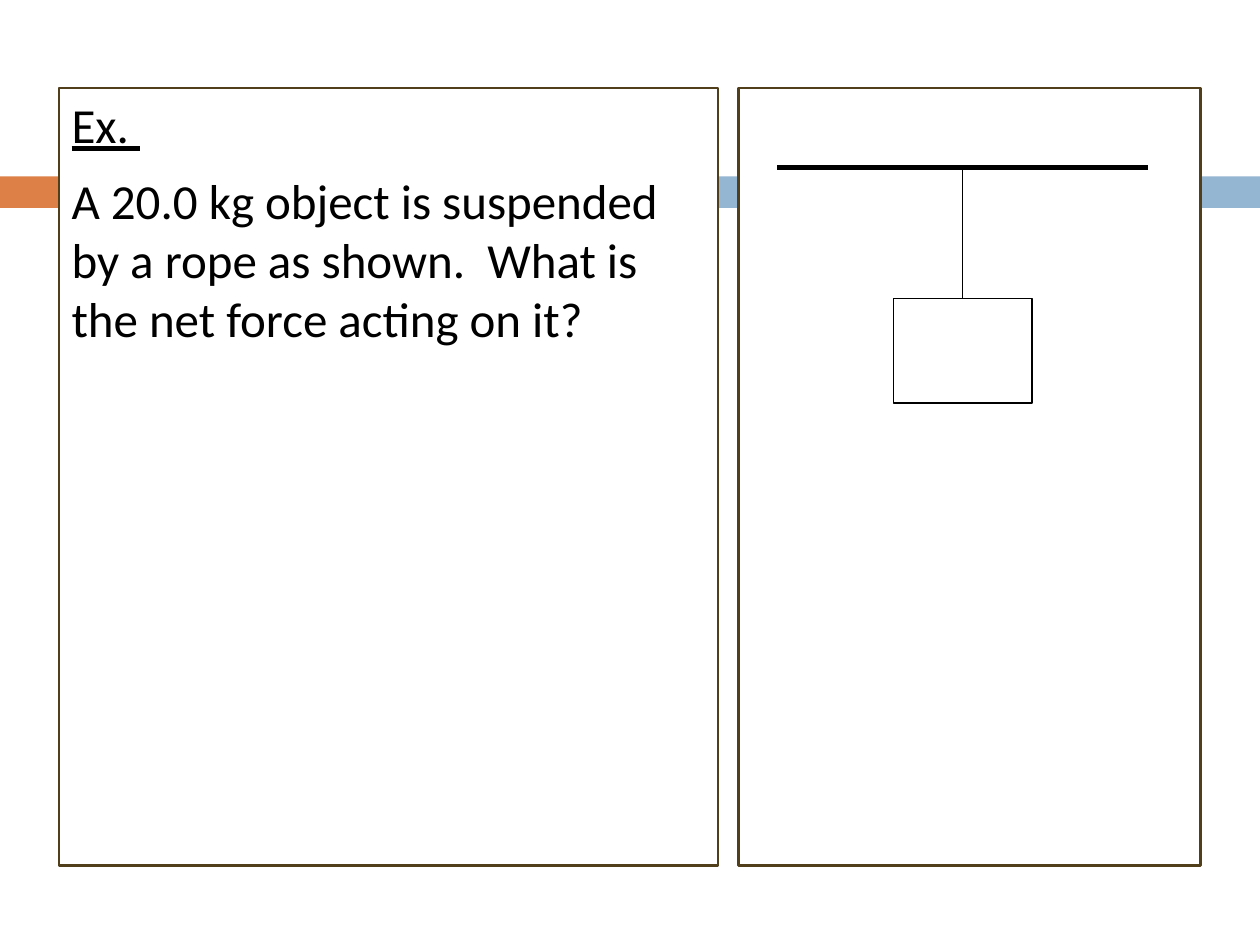
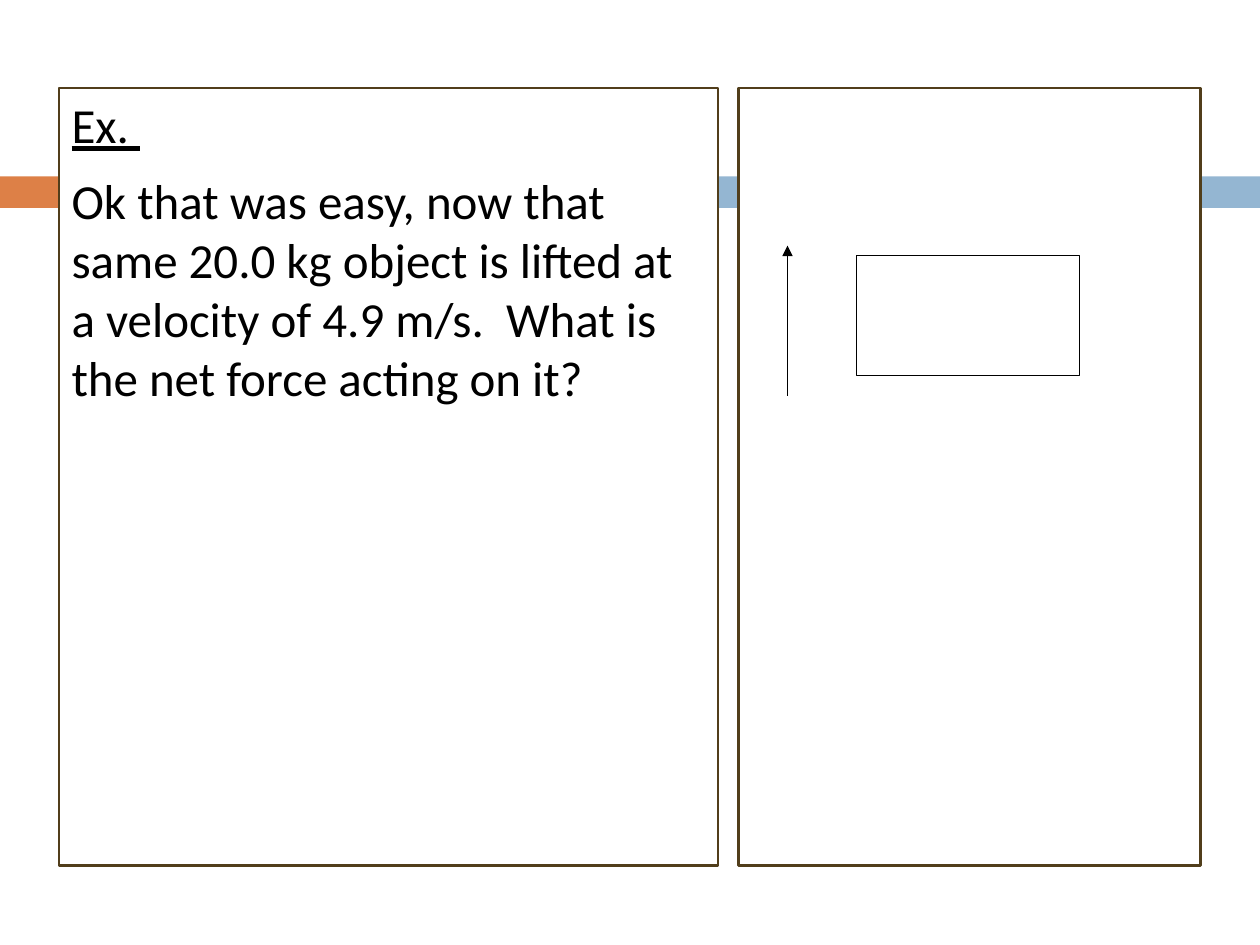
from collections import namedtuple

from lxml.etree import SubElement
from pptx import Presentation
from pptx.dml.color import RGBColor
from pptx.enum.shapes import MSO_CONNECTOR, MSO_SHAPE
from pptx.enum.text import MSO_ANCHOR, PP_ALIGN
from pptx.oxml.ns import qn
from pptx.util import Inches, Pt

WHITE = RGBColor(0xFF, 0xFF, 0xFF)
BLACK = RGBColor(0, 0, 0)
BROWN = RGBColor(0x51, 0x3E, 0x1B)
ORANGE = RGBColor(0xDD, 0x80, 0x47)
BLUE = RGBColor(0x94, 0xB6, 0xD2)

# The slide is a grid of square cells
COLS, ROWS = 100, 75
CELL = Inches(0.1)

Box = namedtuple("Box", "x y w h")
BAND = Box(0, 14, COLS, 2.5)
QUESTION = Box(4.7, 7, 52.3, 61.7)
DIAGRAM = Box(58.6, 7, 36.7, 61.7)


def grid(*cells):
    return [round(c * CELL) for c in cells]


def inside(box, x, y, w, h):
    return Box(box.x + x, box.y + y, w, h)


def add_rect(s, box, fill=WHITE, line=None, width=0.75):
    sp = s.shapes.add_shape(MSO_SHAPE.RECTANGLE, *grid(*box))
    sp.shadow.inherit = False
    sp.fill.solid()
    sp.fill.fore_color.rgb = fill
    if line is None:
        sp.line.fill.background()
    else:
        sp.line.color.rgb = line
        sp.line.width = Pt(width)
    return sp


def add_line(s, box, x1, y1, x2, y2, width=0.75, arrow=False):
    ends = grid(box.x + x1, box.y + y1, box.x + x2, box.y + y2)
    cxn = s.shapes.add_connector(MSO_CONNECTOR.STRAIGHT, *ends)
    cxn.line.color.rgb = BLACK
    cxn.line.width = Pt(width)
    if arrow:
        SubElement(cxn.line._get_or_add_ln(), qn("a:tailEnd"), type="triangle")
    SubElement(cxn._element.spPr, qn("a:effectLst"))


def draw_band(s, box):
    tab, gap = 5.8, 0.7
    add_rect(s, inside(box, 0, 0, tab, box.h), ORANGE)
    add_rect(s, inside(box, tab + gap, 0, box.w - tab - gap, box.h), BLUE)


def draw_question(s, box, question):
    tf = add_rect(s, box, line=BROWN, width=1.5).text_frame
    tf.word_wrap = True
    tf.vertical_anchor = MSO_ANCHOR.TOP
    for i, text in enumerate(("Ex. ", question)):
        p = tf.paragraphs[0] if i == 0 else tf.add_paragraph()
        p.alignment = PP_ALIGN.LEFT
        p.space_after = Pt(10)
        r = p.add_run()
        r.text = text
        r.font.color.rgb = BLACK
        style = {"name": "Calibri", "size": Pt(28), "underline": i == 0}
        for key, value in style.items():
            setattr(r.font, key, value)


def draw_suspended(s, box):
    # Ceiling, with the rope and the load centred under it
    left, right, ceiling, rope = 3.1, 32.5, 6.3, 10.4
    load_w, load_h = 11, 8.3
    middle, load_top = (left + right) / 2, ceiling + rope
    add_line(s, box, left, ceiling, right, ceiling, width=2.5)
    add_line(s, box, middle, ceiling, middle, load_top)
    load = inside(box, middle - load_w / 2, load_top, load_w, load_h)
    add_rect(s, load, line=BLACK)


def draw_lifted(s, box):
    # Load, with an upward arrow beside it
    add_rect(s, inside(box, 9.4, 13.3, 17.7, 9.5), line=BLACK)
    add_line(s, box, 3.9, 24.4, 3.9, 12.5, arrow=True)


def add_example(prs, question, draw_diagram):
    s = prs.slides.add_slide(prs.slide_layouts[6])
    draw_band(s, BAND)
    add_rect(s, DIAGRAM, line=BROWN, width=1.5)
    draw_question(s, QUESTION, question)
    draw_diagram(s, DIAGRAM)


EXAMPLES = [
    ("A 20.0 kg object is suspended by a rope as shown.  "
     "What is the net force acting on it?", draw_suspended),
    ("Ok that was easy, now that same 20.0 kg object is lifted at a velocity "
     "of 4.9 m/s.  What is the net force acting on it?", draw_lifted),
]


def main():
    prs = Presentation()
    prs.slide_width, prs.slide_height = grid(COLS, ROWS)
    for question, draw_diagram in EXAMPLES:
        add_example(prs, question, draw_diagram)
    prs.save("out.pptx")


if __name__ == "__main__":
    main()
